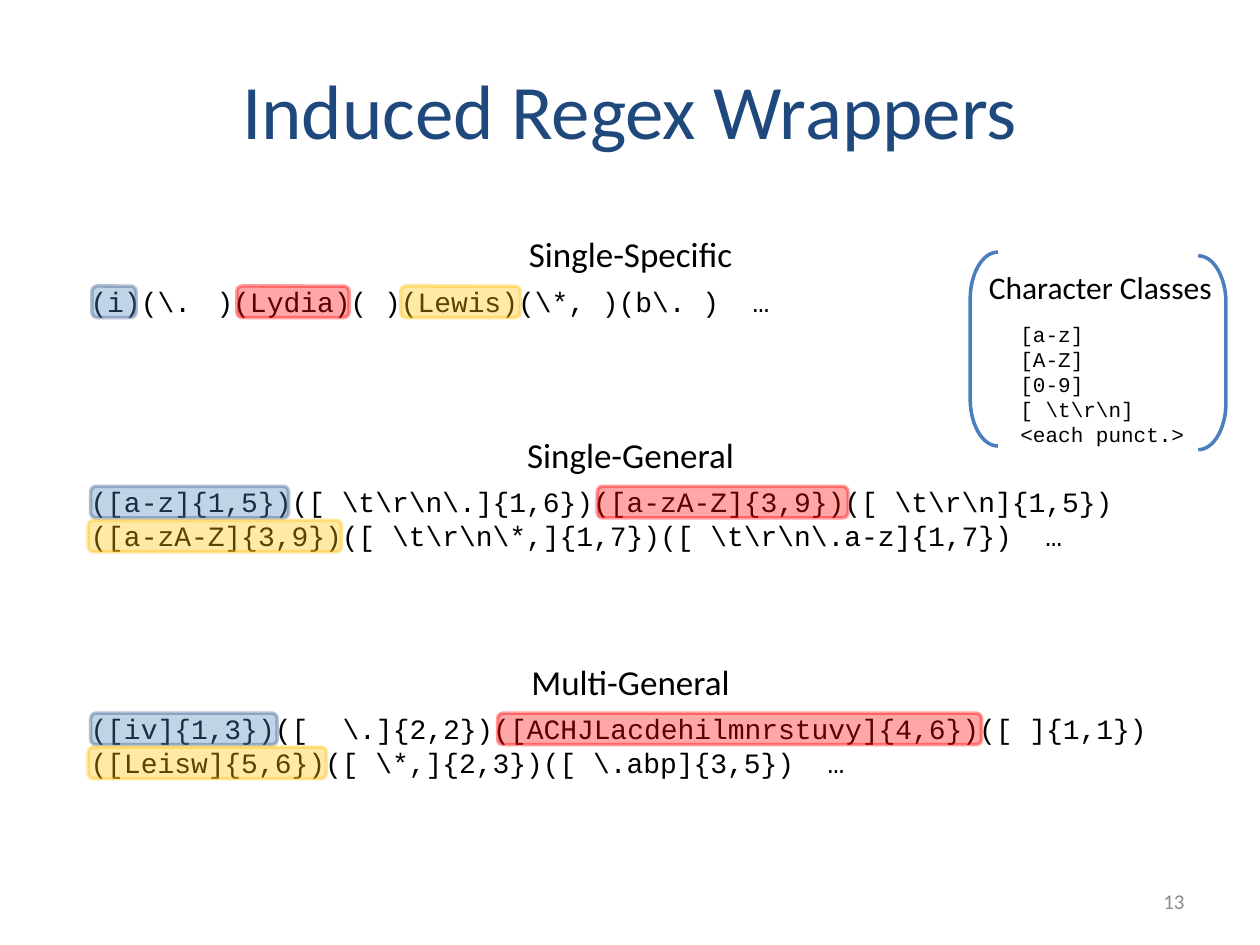
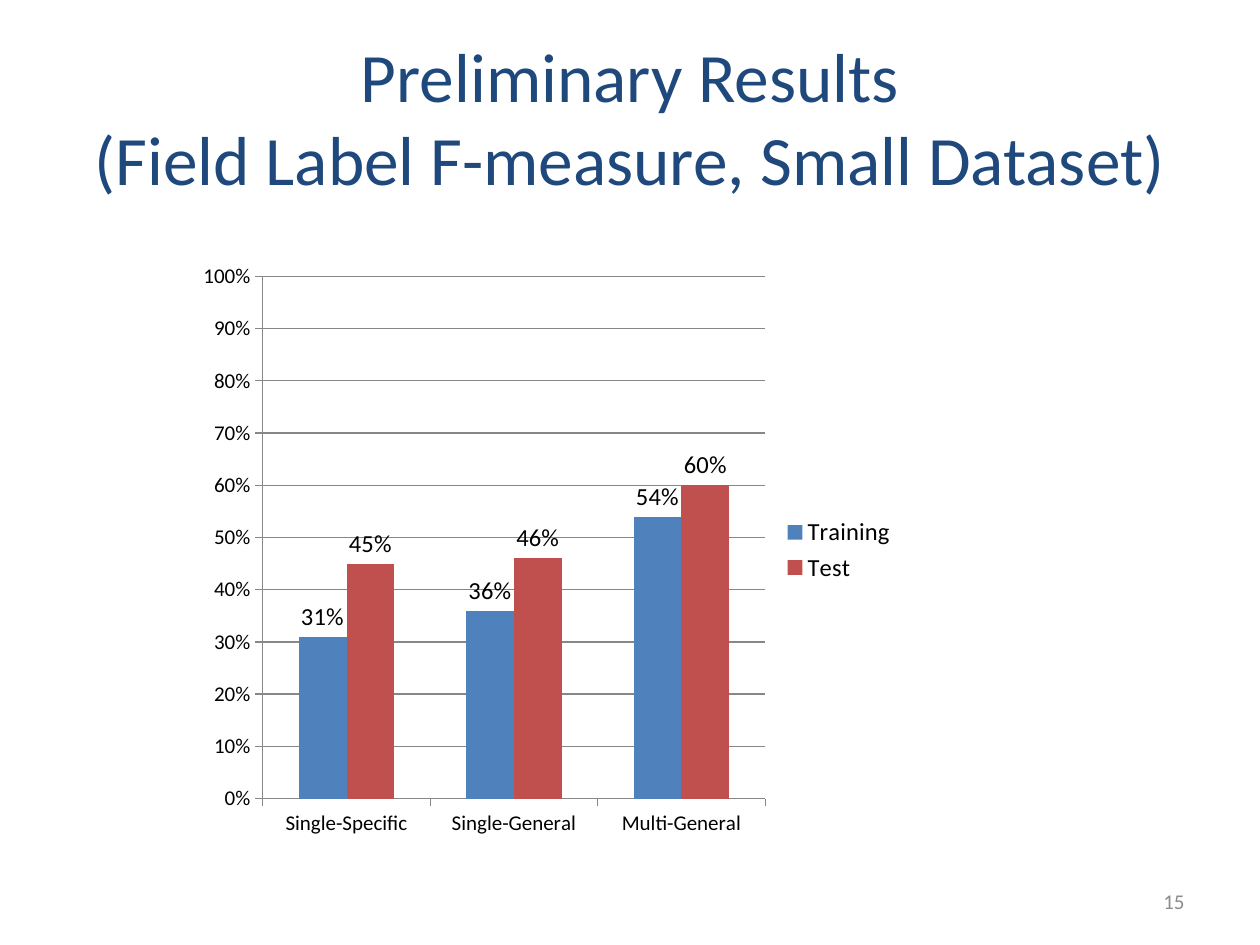
import pptx
import pptx.util
import pptx.dml.color
import pptx.chart.data
import pptx.enum.chart
import pptx.enum.shapes
import pptx.enum.text
from pptx.oxml.ns import qn
from lxml import etree

Inches, Pt = pptx.util.Inches, pptx.util.Pt
SHAPE = pptx.enum.shapes.MSO_SHAPE
ALIGN = pptx.enum.text.PP_ALIGN
ANCHOR = pptx.enum.text.MSO_ANCHOR
XL = pptx.enum.chart

SANS, MONO = "Calibri", "Courier New"
BLACK, NAVY, GRAY, GRID = "000000", "1F497D", "8C8C8C", "878787"
BLUE, RED = "4F81BD", "C0504D"
BRACKET = "4B7EBC"
LABEL_MARK = {"fill": "4F81BD", "line": "3A5F8C", "line_alpha": 40}
GIVEN_MARK = {"fill": "FF0000", "line": "FF0000", "line_alpha": 38}
SURNAME_MARK = {"fill": "FFC000", "line": "FFC000", "line_alpha": 38}

SECTIONS = [
    ("Single-Specific", 1.8, "(i)(\\.\t)(Lydia)( )(Lewis)(\\*, )(b\\. )  …",
     [(LABEL_MARK, 0, 0.11, 0.35), (GIVEN_MARK, 0, 1.26, 0.89),
      (SURNAME_MARK, 0, 2.56, 0.95)]),
    ("Single-General", 3.39,
     r"([a-z]{1,5})([ \t\r\n\.]{1,6})([a-zA-Z]{3,9})([ \t\r\n]{1,5}) "
     r"([a-zA-Z]{3,9})([ \t\r\n\*,]{1,7})([ \t\r\n\.a-z]{1,7})  …",
     [(LABEL_MARK, 0, 0.1, 1.57), (GIVEN_MARK, 0, 4.12, 1.99),
      (SURNAME_MARK, 1, 0.08, 2.01)]),
    ("Multi-General", 5.19,
     "([iv]{1,3})([\t\\.]{2,2})([ACHJLacdehilmnrstuvy]{4,6})([ ]{1,1}) "
     "([Leisw]{5,6})([ \\*,]{2,3})([ \\.abp]{3,5})  …",
     [(LABEL_MARK, 0, 0.1, 1.48), (GIVEN_MARK, 0, 3.33, 3.84),
      (SURNAME_MARK, 1, 0.08, 1.89)]),
]
CLASSES = ["[a-z]", "[A-Z]", "[0-9]", r"[ \t\r\n]", "<each punct.>"]
RESULTS = {"Training": (BLUE, (0.31, 0.36, 0.54)),
           "Test": (RED, (0.45, 0.46, 0.6))}


def rgb(value):
    return pptx.dml.color.RGBColor.from_string(value)


def style(font, size, name=SANS, color=BLACK):
    for key, value in {"size": Pt(size), "name": name, "bold": False}.items():
        setattr(font, key, value)
    font.color.rgb = rgb(color)


def add_text(s, box, lines, size, name=SANS, color=BLACK,
             align=ALIGN.LEFT, anchor=ANCHOR.TOP):
    tf = s.shapes.add_textbox(*map(Inches, box)).text_frame
    for key, value in {"word_wrap": True, "vertical_anchor": anchor}.items():
        setattr(tf, key, value)
    for i, line in enumerate(lines):
        p = tf.paragraphs[0] if i == 0 else tf.add_paragraph()
        p.text = line
        p.alignment = align
        for r in p.runs:
            style(r.font, size, name, color)


def add_alpha(fill_parent, percent):
    color = fill_parent.find(qn("a:solidFill"))[0]
    etree.SubElement(color, qn("a:alpha")).set("val", str(percent * 1000))


def add_outline(s, preset, box, color):
    sp = s.shapes.add_shape(preset, *map(Inches, box))
    sp.shadow.inherit = False
    sp.line.color.rgb = rgb(color)
    sp.line.width = Pt(2)
    return sp


def add_mark(s, box, mark):
    sp = add_outline(s, SHAPE.ROUNDED_RECTANGLE, box, mark["line"])
    sp.fill.solid()
    sp.fill.fore_color.rgb = rgb(mark["fill"])
    props = sp._element.spPr
    add_alpha(props, 35)
    add_alpha(props.find(qn("a:ln")), mark["line_alpha"])


def add_section(s, left, top, name, code, marks):
    add_text(s, (left + 3.05, top, 2.67, 0.44), [name], 20, align=ALIGN.CENTER)
    code_top = top + 0.41
    add_text(s, (left, code_top, 8.75, 0.64), [code], 16, MONO)
    for mark, row, dx, width in marks:
        add_mark(s, (left + dx, code_top + 0.06 + row * 0.27, width, 0.25), mark)


def add_classes(s, left, top):
    add_text(s, (left + 0.05, top + 0.08, 2, 0.4), ["Character Classes"], 18)
    add_text(s, (left + 0.3, top + 0.5, 1.75, 1.11), CLASSES, 12, MONO)
    for dx, dy, rotation in ((1.81, 0.03, 0), (0, 0, 180)):
        sp = add_outline(s, SHAPE.RIGHT_BRACKET,
                         (left + dx, top + dy, 0.22, 1.54), BRACKET)
        sp.fill.background()
        sp.adjustments[0] = 1.7
        sp.rotation = rotation


def add_results_chart(s, box):
    data = pptx.chart.data.CategoryChartData(number_format="0%")
    data.categories = [name for name, *_ in SECTIONS]
    for name, (_, values) in RESULTS.items():
        data.add_series(name, values)
    chart = s.shapes.add_chart(XL.XL_CHART_TYPE.COLUMN_CLUSTERED,
                               *map(Inches, box), data).chart
    style(chart.font, 10)
    chart.has_title = False
    chart.has_legend = True
    chart.legend.position = XL.XL_LEGEND_POSITION.RIGHT
    chart.legend.include_in_layout = False
    style(chart.legend.font, 14)

    axis = chart.value_axis
    for key, value in {"minimum_scale": 0, "maximum_scale": 1,
                       "major_unit": 0.1, "has_major_gridlines": True}.items():
        setattr(axis, key, value)
    axis.tick_labels.number_format = "0%"
    axis.tick_labels.number_format_is_linked = False
    axis.major_gridlines.format.line.color.rgb = rgb(GRID)
    for ax in (axis, chart.category_axis):
        style(ax.tick_labels.font, 12)
        ax.format.line.color.rgb = rgb(GRID)
        ax.major_tick_mark = XL.XL_TICK_MARK.OUTSIDE

    plot = chart.plots[0]
    for key, value in {"gap_width": 150, "overlap": 0,
                       "vary_by_categories": False}.items():
        setattr(plot, key, value)
    for series, (color, _) in zip(plot.series, RESULTS.values()):
        series.format.fill.solid()
        series.format.fill.fore_color.rgb = rgb(color)
        labels = series.data_labels
        for key, value in {"show_value": True, "number_format": "0%",
                           "number_format_is_linked": False,
                           "position": XL.XL_LABEL_POSITION.OUTSIDE_END}.items():
            setattr(labels, key, value)
        style(labels.font, 14)


def add_slide(prs, title, size, height, number):
    s = prs.slides.add_slide(prs.slide_layouts[6])
    add_text(s, (0.5, 0.3, 9, height), [title], size, color=NAVY,
             align=ALIGN.CENTER, anchor=ANCHOR.MIDDLE)
    add_text(s, (7.17, 6.95, 2.33, 0.4), [number], 12, color=GRAY,
             align=ALIGN.RIGHT, anchor=ANCHOR.MIDDLE)
    return s


def wrappers_slide(prs):
    s = add_slide(prs, "Induced Regex Wrappers", 44, 1.12, "13")
    for name, top, code, marks in SECTIONS:
        add_section(s, 0.62, top, name, code, marks)
    add_classes(s, 7.7, 2)


def results_slide(prs):
    s = add_slide(prs, "Preliminary Results\v(Field Label F-measure, Small Dataset)",
                  39.6, 1.25, "15")
    add_results_chart(s, (1.5, 2, 5.71, 4.73))


def main():
    prs = pptx.Presentation()
    prs.slide_width, prs.slide_height = Inches(10), Inches(7.5)
    wrappers_slide(prs)
    results_slide(prs)
    prs.save("out.pptx")


if __name__ == "__main__":
    main()
